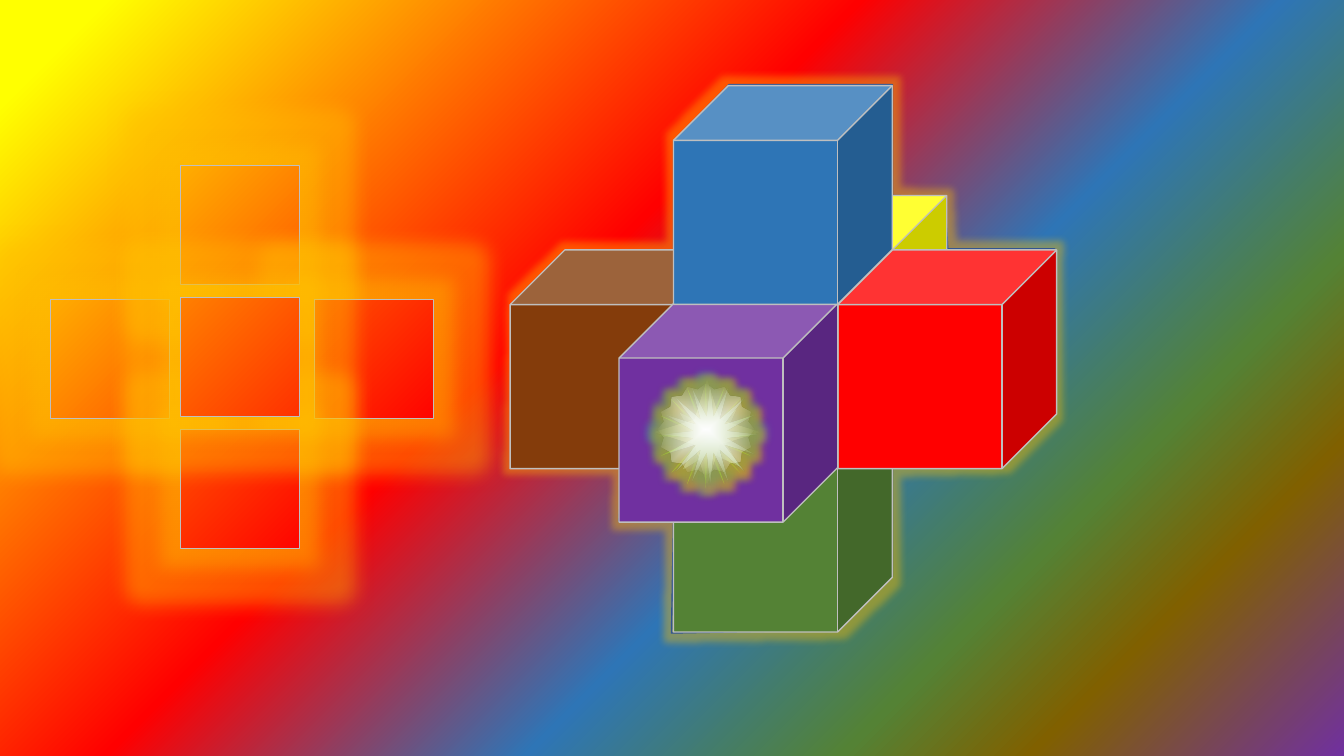
from lxml.etree import SubElement
from pptx import Presentation
from pptx.dml.color import RGBColor
from pptx.enum.shapes import MSO_SHAPE
from pptx.enum.text import MSO_ANCHOR, PP_ALIGN
from pptx.oxml import parse_xml
from pptx.oxml.ns import nsdecls, qn
from pptx.util import Inches, Pt

RAINBOW = [(5, "FFFF00"), (41, "FF0000"), (61, "2E75B6"),
           (76, "548235"), (85, "806000"), (100, "7030A0")]
OUTLINE = [(7.23, 0.84), (8.85, 0.84), (8.85, 1.94), (9.37, 1.95), (9.4, 2.47),
           (10.46, 2.47), (10.45, 4.1), (9.94, 4.61), (8.85, 4.64), (8.85, 5.72),
           (8.3, 6.25), (6.66, 6.28), (6.68, 5.17), (6.14, 5.17), (6.17, 4.62),
           (5.07, 4.62), (5.11, 2.99), (5.64, 2.48), (6.68, 2.48), (6.68, 1.4)]
CUBES = [(6.68, 4.1, "548235"), (5.06, 2.48, "843C0B"), (7.22, 1.94, "FFFF00"),
         (8.31, 2.48, "FF0000"), (6.14, 3.01, "7030A0"), (6.68, 0.85, "2E75B6")]
SQUARES = [(0.5, 2.97), (1.79, 1.64), (3.12, 2.97), (1.79, 4.26), (1.79, 2.95)]
RAYS = [(MSO_SHAPE.STAR_4_POINT, (6.64, 3.96, 0.8, 0.8), 0.167, 41.8, "ED7D31"),
        (MSO_SHAPE.STAR_4_POINT, (6.48, 3.76, 1.06, 1.06), 0.167, 0, "4472C4"),
        (MSO_SHAPE.STAR_16_POINT, (6.56, 3.8, 0.96, 1.03), 0.173, 0, "FFC000"),
        (MSO_SHAPE.STAR_16_POINT, (6.52, 3.8, 0.96, 0.92), 0.441, 0, "70AD47")]


def rgb(color):
    """Turn a hex string into a colour."""
    return RGBColor.from_string(color)


def gradient(stops, kind, focus):
    """Make a path gradient from (position, colour, opacity) stops."""
    grad = parse_xml(f'<a:gradFill {nsdecls("a")} rotWithShape="1"><a:gsLst/></a:gradFill>')
    for pos, color, *alpha in stops:
        gs = SubElement(grad[0], qn("a:gs"), pos=str(pos * 1000))
        clr = SubElement(gs, qn("a:srgbClr"), val=color)
        for value in alpha:
            SubElement(clr, qn("a:alpha"), val=str(value * 1000))
    shade = SubElement(grad, qn("a:path"), {"path": kind})
    sides = {side: str(value * 1000) for side, value in zip("ltrb", focus) if value}
    SubElement(shade, qn("a:fillToRect"), sides)
    return grad


def set_gradient(fill, props, grad):
    """Replace the fill of a properties element by a gradient."""
    fill.background()
    props.replace(props.find(qn("a:noFill")), grad)


def add_glow(sp, color, size, alpha=40):
    """Give a shape a soft coloured glow."""
    effects = sp._element.spPr.find(qn("a:effectLst"))
    glow = SubElement(effects, qn("a:glow"), rad=str(Pt(size)))
    clr = SubElement(glow, qn("a:srgbClr"), val=color)
    SubElement(clr, qn("a:alpha"), val=str(alpha * 1000))


def set_line(sp, color=None):
    """Draw a thin outline, or none, and drop the shadow."""
    sp.shadow.inherit = False
    if color:
        sp.line.color.rgb = rgb(color)
        sp.line.width = Pt(1)
    else:
        sp.line.fill.background()


def add_preset(s, kind, box, fill=None, line=None, adj=None):
    """Add a preset shape with a plain fill."""
    sp = s.shapes.add_shape(kind, *map(Inches, box))
    set_line(sp, line)
    if fill:
        sp.fill.solid()
        sp.fill.fore_color.rgb = rgb(fill)
    if adj is not None:
        sp.adjustments[0] = adj
    return sp


def add_text(sp, text, size=18, color="FFFFFF", font="Calibri"):
    """Write centred text in a shape."""
    tf = sp.text_frame
    tf.vertical_anchor = MSO_ANCHOR.MIDDLE
    p = tf.paragraphs[0]
    p.alignment = PP_ALIGN.CENTER
    r = p.add_run()
    r.text = text
    r.font.size, r.font.name = Pt(size), font
    r.font.color.rgb = rgb(color)


def add_outline(s):
    """Add the glowing outline behind the cubes."""
    points = [(Inches(x), Inches(y)) for x, y in OUTLINE]
    builder = s.shapes.build_freeform(*points[0])
    builder.add_line_segments(points[1:], close=True)
    sp = builder.convert_to_shape()
    sp.fill.background()
    set_line(sp, "325491")
    add_glow(sp, "FFC000", 11)


def add_square(s, x, y):
    """Add a glowing square that shows the slide background."""
    sp = add_preset(s, MSO_SHAPE.RECTANGLE, (x, y, 1.18, 1.18), line="BFBFBF")
    sp._element.set("useBgFill", "1")
    add_glow(sp, "FFC000", 27)


def add_ray(s, kind, box, adj, rotation, glow):
    """Add a star that fades from white to clear."""
    sp = add_preset(s, kind, box, adj=adj)
    sp.rotation = rotation
    fade = gradient([(0, "FFFFFF", 100), (100, "FFFFFF", 0)], "shape", (50, 50, 50, 50))
    set_gradient(sp.fill, sp._element.spPr, fade)
    add_glow(sp, glow, 11)


def main():
    """Build the slide."""
    prs = Presentation()
    prs.slide_width, prs.slide_height = Inches(13.33), Inches(7.5)
    s = prs.slides.add_slide(prs.slide_layouts[6])
    fill = s.background.fill
    fill.solid()
    set_gradient(fill, s._element.find(f".//{qn('p:bgPr')}"),
                 gradient(RAINBOW, "circle", (0, 0, 100, 100)))
    add_outline(s)
    for x, y, color in CUBES:
        add_preset(s, MSO_SHAPE.CUBE, (x, y, 2.17, 2.17), color, "BFBFBF")
    for x, y in SQUARES:
        add_square(s, x, y)
    star = add_preset(s, MSO_SHAPE.STAR_16_POINT, (6.52, 3.81, 0.96, 1.03), "92D050", adj=0.111)
    add_glow(star, "70AD47", 11)
    add_text(star, "`")
    for ray in RAYS:
        add_ray(s, *ray)
    prs.save("out.pptx")


if __name__ == "__main__":
    main()
